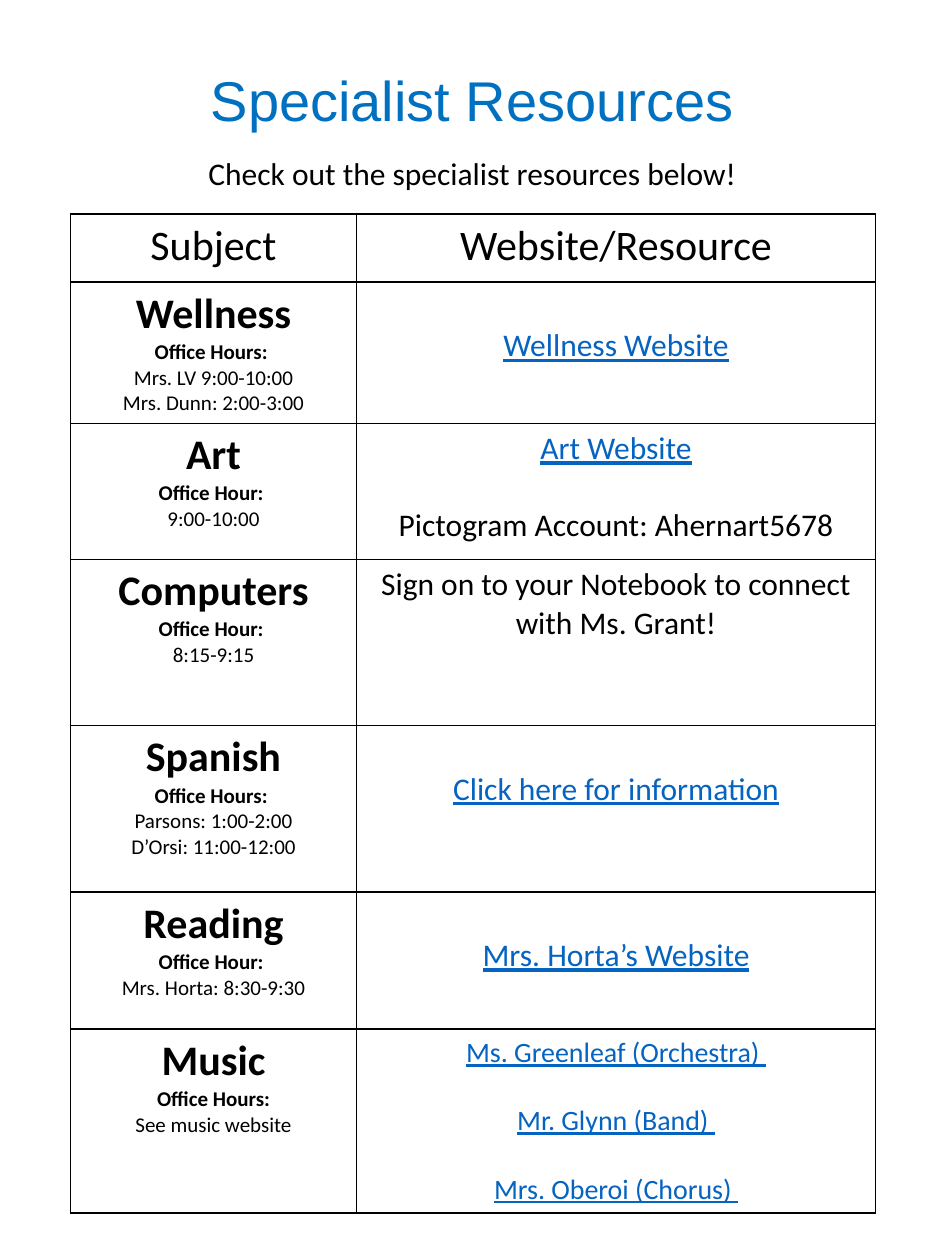
from lxml import etree
from pptx import Presentation
from pptx import util as u
from pptx.dml.color import RGBColor
from pptx.enum import text
from pptx.oxml import ns

BLACK = RGBColor(0x00, 0x00, 0x00)
TITLE_BLUE = RGBColor(0x00, 0x70, 0xC0)
LINK_BLUE = RGBColor(0x05, 0x63, 0xC1)

COLUMN_WIDTHS = [2.27, 4.12]
HEADER_HEIGHT = 0.54
LINE_HEIGHT = 1.22  # Calibri line height, in parts of the text size

# subject, hours label, hours, resources, resource size, are links, blank line on top, row height
SUBJECTS = [
    ("Wellness", "Office Hours: ", ["Mrs. LV 9:00-10:00", "Mrs. Dunn: 2:00-3:00"],
     [("Wellness Website", True)], 18, True, 1.12),
    ("Art", "Office Hour: ", ["9:00-10:00"],
     [("Art Website", True), ("Pictogram Account: Ahernart5678", False)], 18, False, 1.08),
    ("Computers", "Office Hour: ", ["8:15-9:15"],
     [("Sign on to your Notebook to connect with Ms. Grant!", False)], 18, False, 1.32),
    ("Spanish", "Office Hours: ", ["Parsons: 1:00-2:00", "D’Orsi: 11:00-12:00"],
     [("Click here for information", True)], 18, True, 1.32),
    ("Reading", "Office Hour: ", ["Mrs. Horta: 8:30-9:30"],
     [("Mrs. Horta’s Website", True)], 18, True, 1.09),
    ("Music", "Office Hours:", ["See music website"],
     [("Ms. Greenleaf (Orchestra) ", True), ("Mr. Glynn (Band) ", True),
      ("Mrs. Oberoi (Chorus) ", True)], 16, False, 1.46),
]


def add_text(frame, words, size, font="Calibri", color=BLACK, bold=False,
             underline=False, before=0, spacing=None):
    """Add a centred paragraph, using the frame's first one while it is empty."""
    para = frame.paragraphs[0]
    if para.runs:
        para = frame.add_paragraph()
    para.alignment = text.PP_ALIGN.CENTER
    para.space_before = u.Pt(before)
    if spacing:
        para.line_spacing = spacing
    span = para.add_run()
    span.text = words
    span.font.size = u.Pt(size)
    span.font.name = font
    span.font.color.rgb = color
    span.font.bold = bold
    span.font.underline = underline


class Page:
    def __init__(self, slide):
        self.slide = slide

    def heading(self, left, top, width, height, words, anchor, **style):
        box = self.slide.shapes.add_textbox(
            u.Inches(left), u.Inches(top), u.Inches(width), u.Inches(height))
        box.text_frame.word_wrap = True
        box.text_frame.vertical_anchor = anchor
        add_text(box.text_frame, words, spacing=0.9, **style)

    def table(self, left, top, widths, heights):
        frame = self.slide.shapes.add_table(
            len(heights), len(widths), u.Inches(left), u.Inches(top),
            u.Inches(sum(widths)), u.Inches(sum(heights)))
        table = frame.table
        table.first_row = table.horz_banding = False
        for column, width in zip(table.columns, widths):
            column.width = u.Inches(width)
        for row, height in zip(table.rows, heights):
            row.height = u.Inches(height)
        for cell in table.iter_cells():
            self.border(cell)
            cell.fill.background()
        return table

    def border(self, cell):
        properties = cell._tc.get_or_add_tcPr()
        for side in ("a:lnL", "a:lnR", "a:lnT", "a:lnB"):
            line = etree.SubElement(properties, ns.qn(side), w=str(u.Pt(1)))
            fill = etree.SubElement(line, ns.qn("a:solidFill"))
            etree.SubElement(fill, ns.qn("a:srgbClr"), val=str(BLACK))

    def subject(self, cell, name, label, hours):
        add_text(cell.text_frame, name, 24, bold=True)
        add_text(cell.text_frame, label, 12, bold=True)
        for entry in hours:
            add_text(cell.text_frame, entry, 12)

    def resources(self, cell, entries, size, lowered):
        gap = size * LINE_HEIGHT
        if lowered:
            cell.margin_top = u.Inches(0.05) + u.Pt(gap)
        for index, (words, is_link) in enumerate(entries):
            add_text(cell.text_frame, words, size, underline=is_link,
                     color=LINK_BLUE if is_link else BLACK,
                     before=gap if index else 0)


def main():
    deck = Presentation()
    deck.slide_width, deck.slide_height = u.Inches(7.5), u.Inches(10)
    page = Page(deck.slides.add_slide(deck.slide_layouts[6]))

    page.heading(0.56, 0.47, 6.38, 0.64, "Specialist Resources",
                 text.MSO_ANCHOR.BOTTOM, size=32, font="Arial", color=TITLE_BLUE)
    page.heading(0.94, 1.21, 5.62, 2.41, "Check out the specialist resources below!",
                 text.MSO_ANCHOR.TOP, size=18)

    heights = [HEADER_HEIGHT] + [subject[-1] for subject in SUBJECTS]
    table = page.table(0.56, 1.7, COLUMN_WIDTHS, heights)
    for column, words in enumerate(["Subject", "Website/Resource"]):
        add_text(table.cell(0, column).text_frame, words, 24)
    for row, (name, label, hours, entries, size, lowered, _) in enumerate(SUBJECTS, 1):
        page.subject(table.cell(row, 0), name, label, hours)
        page.resources(table.cell(row, 1), entries, size, lowered)

    deck.save("out.pptx")


if __name__ == "__main__":
    main()
